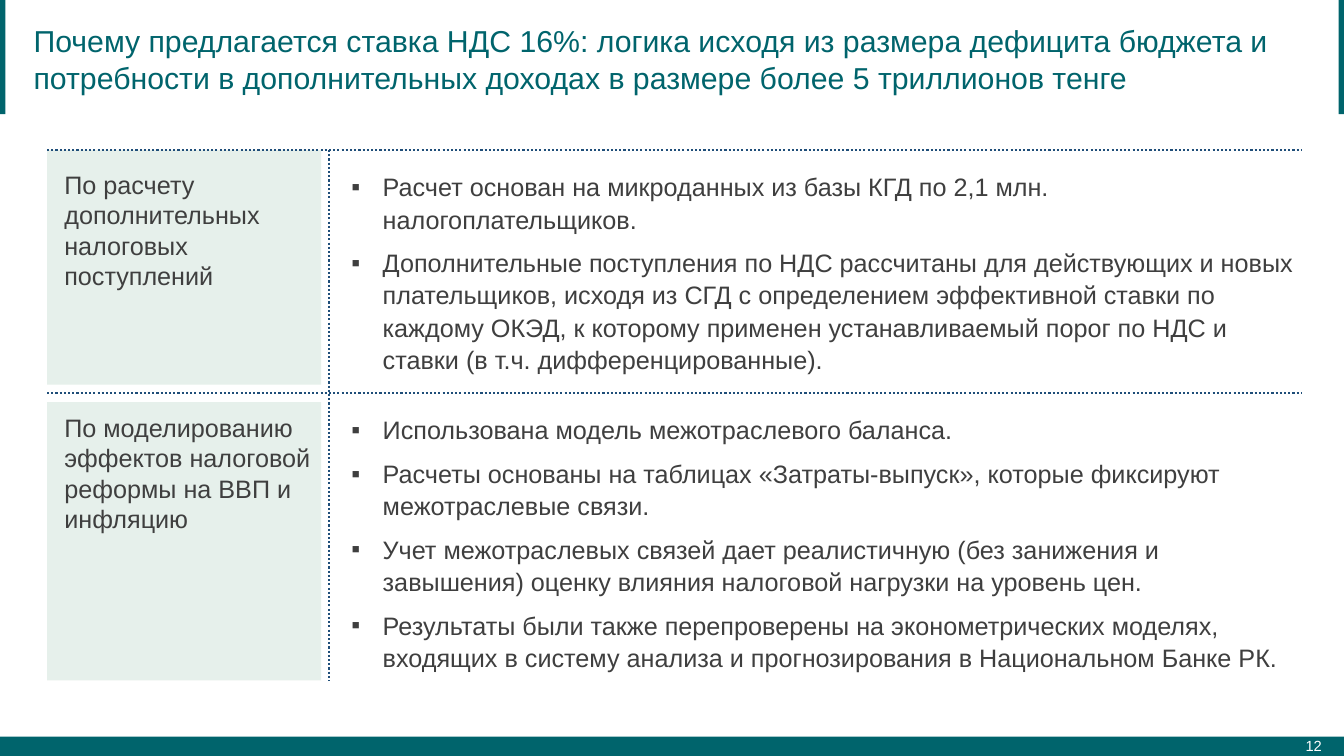
from lxml import etree
from pptx import Presentation
from pptx import util as u
from pptx.dml.color import RGBColor
from pptx.enum import dml, shapes, text
from pptx.oxml.ns import qn

TEAL = RGBColor(0x00, 0x64, 0x6C)
MINT = RGBColor(0xE6, 0xF0, 0xEB)
NAVY = RGBColor(0x1F, 0x4E, 0x79)
GRAY = RGBColor(0x3F, 0x3F, 0x3F)
WHITE = RGBColor(0xFF, 0xFF, 0xFF)

# The slide is a grid of 100 columns by 100 rows
WIDTH, HEIGHT = u.Inches(13.33), u.Inches(7.5)
LEFT, RIGHT, SPLIT = 3.5, 96.85, 24.45
TOP, MIDDLE, BOTTOM = 19.85, 52, 90.1
INDENT = u.Inches(0.31)

TITLE = ("Почему предлагается ставка НДС 16%: логика исходя из размера дефицита бюджета "
         "и потребности в дополнительных доходах в размере более 5 триллионов тенге")
# Each section: top, bottom, panel gaps above and below, list height, label, points
SECTIONS = [
    (TOP, MIDDLE, 0, 1.1, 28.5,
     "По расчету дополнительных налоговых поступлений",
     ["Расчет основан на микроданных из базы КГД по 2,1 млн. налогоплательщиков.",
      "Дополнительные поступления по НДС рассчитаны для действующих и новых плательщиков, "
      "исходя из СГД с определением эффективной ставки по каждому ОКЭД, к которому применен "
      "устанавливаемый порог по НДС и ставки (в т.ч. дифференцированные)."]),
    (MIDDLE, BOTTOM, 1.2, 0.1, 38.95,
     "По моделированию эффектов налоговой реформы на ВВП и инфляцию",
     ["Использована модель межотраслевого баланса.",
      "Расчеты основаны на таблицах «Затраты-выпуск», которые фиксируют межотраслевые связи.",
      "Учет межотраслевых связей дает реалистичную (без занижения и завышения) оценку "
      "влияния налоговой нагрузки на уровень цен.",
      "Результаты были также перепроверены на эконометрических моделях, входящих в систему "
      "анализа и прогнозирования в Национальном Банке РК."]),
]


def grid(x, y, w, h):
    """Turn columns and rows into slide lengths."""
    return [int(v * side / 100) for v, side in zip((x, y, w, h), (WIDTH, HEIGHT) * 2)]


def block(slide, box, color):
    rect = slide.shapes.add_shape(shapes.MSO_SHAPE.RECTANGLE, *grid(*box))
    rect.shadow.inherit = False
    rect.fill.solid()
    rect.fill.fore_color.rgb = color
    rect.line.fill.background()


def dots(slide, x1, y1, x2, y2):
    """Draw a dotted rule."""
    rule = slide.shapes.add_connector(shapes.MSO_CONNECTOR.STRAIGHT, *grid(x1, y1, x2, y2))
    rule.line.color.rgb = NAVY
    rule.line.width = u.Pt(1.5)
    rule.line.dash_style = dml.MSO_LINE.ROUND_DOT
    etree.SubElement(rule._element.spPr, qn("a:effectLst"))


def write(shape, box, lines, size, color, bullet=False, anchor=text.MSO_ANCHOR.TOP, **form):
    """Place the shape and fill it with formatted paragraphs."""
    shape.left, shape.top, shape.width, shape.height = grid(*box)
    frame = shape.text_frame
    frame.text = "\n".join(lines)
    frame.word_wrap = True
    frame.auto_size = text.MSO_AUTO_SIZE.NONE
    frame.vertical_anchor = anchor
    for para in frame.paragraphs:
        if bullet:
            mark(para)
        for key, value in form.items():
            setattr(para, key, value)
        for key, value in {"name": "Arial", "size": u.Pt(size)}.items():
            setattr(para.font, key, value)
        para.font.color.rgb = color


def mark(para):
    """Give the paragraph a square bullet and a hanging indent."""
    props = para._p.get_or_add_pPr()
    props.set("marL", str(INDENT))
    props.set("indent", str(-INDENT))
    etree.SubElement(props, qn("a:buFont"), typeface="Arial")
    etree.SubElement(props, qn("a:buChar"), char="▪")


def frame_page(slide):
    """Draw the corner bars, the footer band and the page number."""
    for x in (0, 99.6):
        block(slide, (x, 0, 0.4, 15.1), TEAL)
    block(slide, (0, 97.45, 100, 2.55), TEAL)
    box = (89.4, 96, 9.7, 5.3)
    write(slide.shapes.add_textbox(*grid(*box)), box, ["12"], 10.5, WHITE,
          anchor=text.MSO_ANCHOR.MIDDLE, alignment=text.PP_ALIGN.RIGHT)


def section(slide, holder, top, end, above, below, height, label, points):
    """Draw a shaded label on the left and its bullet list on the right."""
    block(slide, (LEFT, top + above, 20.4, end - top - above - below), MINT)
    dots(slide, LEFT, top, RIGHT, top)
    box = (LEFT + 0.55, top + 1.9, 19.8, 17.5)
    write(slide.shapes.add_textbox(*grid(*box)), box, [label], 18, GRAY)
    write(holder, (SPLIT + 0.95, top + 1.9, 72.6, height), points, 18, GRAY, bullet=True,
          line_spacing=1.07, space_before=u.Pt(0), space_after=u.Pt(8))


def main():
    deck = Presentation()
    deck.slide_width, deck.slide_height = WIDTH, HEIGHT
    slide = deck.slides.add_slide(deck.slide_layouts.get_by_name("Two Content"))
    title, *lists = slide.placeholders
    frame_page(slide)
    write(title, (1.75, 2.65, 94.15, 10.25), [TITLE], 21.6, TEAL,
          anchor=text.MSO_ANCHOR.MIDDLE, alignment=text.PP_ALIGN.LEFT)
    for holder, parts in zip(lists, SECTIONS):
        section(slide, holder, *parts)
    dots(slide, SPLIT, TOP, SPLIT, BOTTOM)
    deck.save("out.pptx")


if __name__ == "__main__":
    main()
